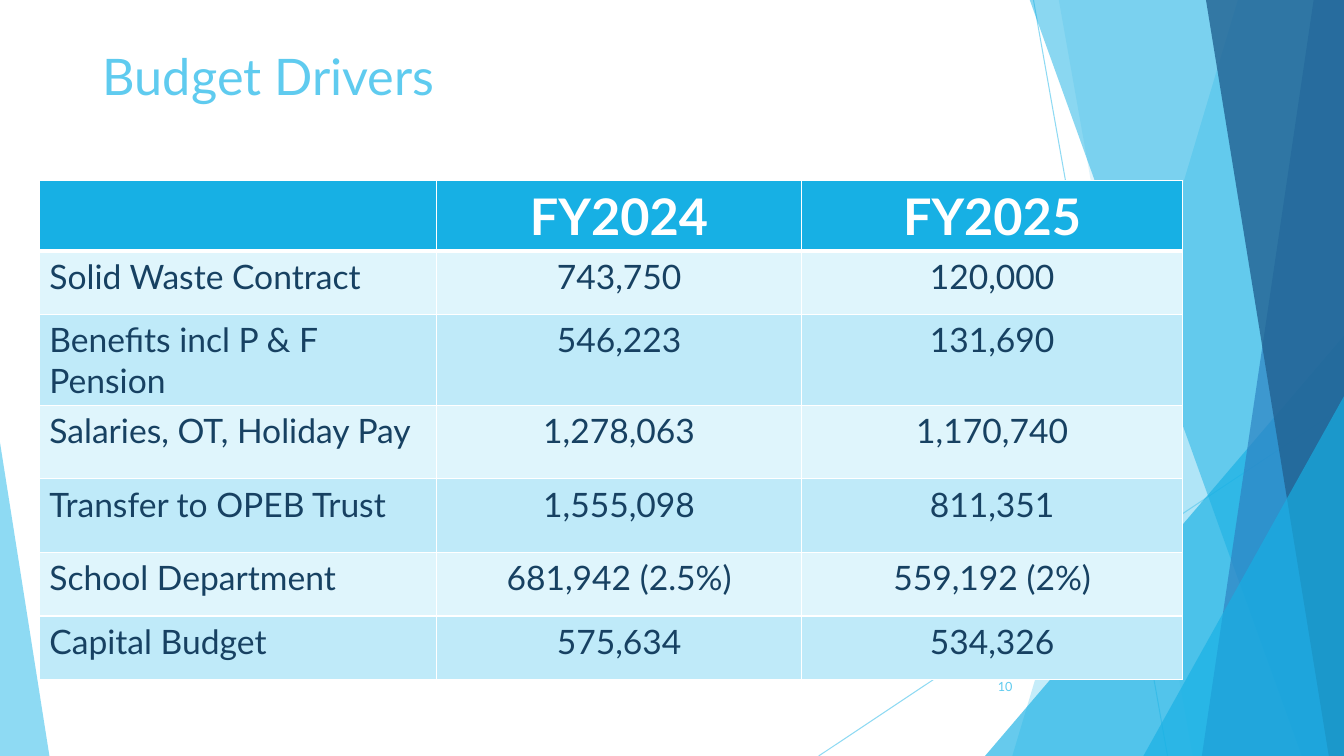
"""Build the Budget Drivers slide."""
from lxml import etree
from pptx import Presentation
from pptx.dml.color import RGBColor
from pptx.enum import shapes, text
from pptx.oxml.ns import qn
from pptx.util import Inches, Pt

HUES = {"sky": "5FCBEF", "cyan": "17B0E4", "blue": "2E83C3", "deep": "226292",
        "navy": "174162", "pale": "DFF5FC", "light": "BFEAF9", "white": "FFFFFF"}
WIDE, HIGH = 13.33, 7.5


def paint(item, fill, hue, alpha):
    """Give a shape or line a partly clear solid colour."""
    fill.solid()
    fill.fore_color.rgb = RGBColor.from_string(HUES[hue])
    tint = item._element.spPr.find(".//" + qn("a:srgbClr"))
    etree.SubElement(tint, qn("a:alpha"), val=str(alpha * 1000))


def style(frame, size, hue, align, bold=False):
    """Format the first paragraph of a text frame."""
    line = frame.paragraphs[0]
    line.alignment = align
    for run in line.runs:
        run.font.name = "Lato"
        run.font.size = Pt(size)
        run.font.bold = bold
        run.font.color.rgb = RGBColor.from_string(HUES[hue])


deck = Presentation()
deck.slide_width, deck.slide_height = Inches(WIDE), Inches(HIGH)
slide = deck.slides.add_slide(deck.slide_layouts[5])
items = slide.shapes
left, mid, right = text.PP_ALIGN.LEFT, text.PP_ALIGN.CENTER, text.PP_ALIGN.RIGHT

for ends in [(10.25, 0, 11.58, HIGH), (WIDE, 4.03, 8.12, HIGH)]:
    ray = items.add_connector(shapes.MSO_CONNECTOR.STRAIGHT, *map(Inches, ends))
    ray.line.width = Pt(0.75)
    paint(ray, ray.line.fill, "sky", 70)
    etree.SubElement(ray._element.spPr, qn("a:effectLst"))

# Bands hold top and bottom x; triangles hold left, top, width and apex.
decor = [("sky", 36, (12.28, 10.04)), ("sky", 20, (10.5, 11.83)),
         ("cyan", 66, (9.77, 3.33, 3.56, 1)), ("cyan", 50, (10.21, 12.91)),
         ("blue", 70, (13.03, 11.92)), ("deep", 80, (11.96, 13.18)),
         ("cyan", 66, (11.34, 3.93, 1.99, 1)), ("sky", 70, (0, 4.39, 0.49, 0))]
for hue, alpha, place in decor:
    if len(place) == 2:
        top, base = place
        pen = items.build_freeform(Inches(top), Inches(-0.01))
        pen.add_line_segments([(Inches(x), Inches(y)) for x, y in
                               [(WIDE, -0.01), (WIDE, HIGH), (base, HIGH)]])
        form = pen.convert_to_shape()
    else:
        x, y, width, apex = place
        form = items.add_shape(shapes.MSO_SHAPE.ISOSCELES_TRIANGLE, Inches(x),
                               Inches(y), Inches(width), Inches(HIGH - y))
        form.adjustments[0] = apex
    form.shadow.inherit = False
    form.line.fill.background()
    paint(form, form.fill, hue, alpha)

rows = [("", "FY2024", "FY2025"),
        ("Solid Waste Contract", "743,750", "120,000"),
        ("Benefits incl P & F Pension", "546,223", "131,690"),
        ("Salaries, OT, Holiday Pay", "1,278,063", "1,170,740"),
        ("Transfer to OPEB Trust", "1,555,098", "811,351"),
        ("School Department", "681,942 (2.5%)", "559,192 (2%)"),
        ("Capital Budget", "575,634", "534,326")]
grid = items.add_table(len(rows), 3, Inches(0.39), Inches(1.79),
                       Inches(11.34), Inches(4.71)).table
for col, width in zip(grid.columns, (3.94, 3.62, 3.78)):
    col.width = Inches(width)
for r, row in enumerate(rows):
    grid.rows[r].height = Inches(0.73 if r in (2, 3, 4) else 0.63)
    for c, word in enumerate(row):
        cell = grid.cell(r, c)
        cell.text_frame.text = word
        head = r == 0
        style(cell.text_frame, 36 if head else 24, "white" if head else "navy",
              mid if c else left, head)
        props = cell._tc.get_or_add_tcPr()
        for side in "LRTB":
            thick = (side == "B" and r == 0) or (side == "T" and r == 1)
            edge = etree.SubElement(props, qn("a:ln" + side),
                                    w=str(Pt(3 if thick else 1)))
            solid = etree.SubElement(edge, qn("a:solidFill"))
            etree.SubElement(solid, qn("a:srgbClr"), val=HUES["white"])
        cell.fill.solid()
        hue = "cyan" if head else ("light", "pale")[r % 2]
        cell.fill.fore_color.rgb = RGBColor.from_string(HUES[hue])

title = items.title
title.left, title.top = Inches(0.92), Inches(0.4)
title.width, title.height = Inches(11.5), Inches(1.23)
title.text_frame.text = "Budget Drivers"
title.text_frame.vertical_anchor = text.MSO_ANCHOR.TOP
style(title.text_frame, 36, "sky", left)

page = items.add_textbox(Inches(9.39), Inches(6.61), Inches(0.75), Inches(0.4))
page.text_frame.word_wrap = True
page.text_frame.text = "10"
page.text_frame.vertical_anchor = text.MSO_ANCHOR.MIDDLE
style(page.text_frame, 9, "sky", right)

deck.save("out.pptx")
